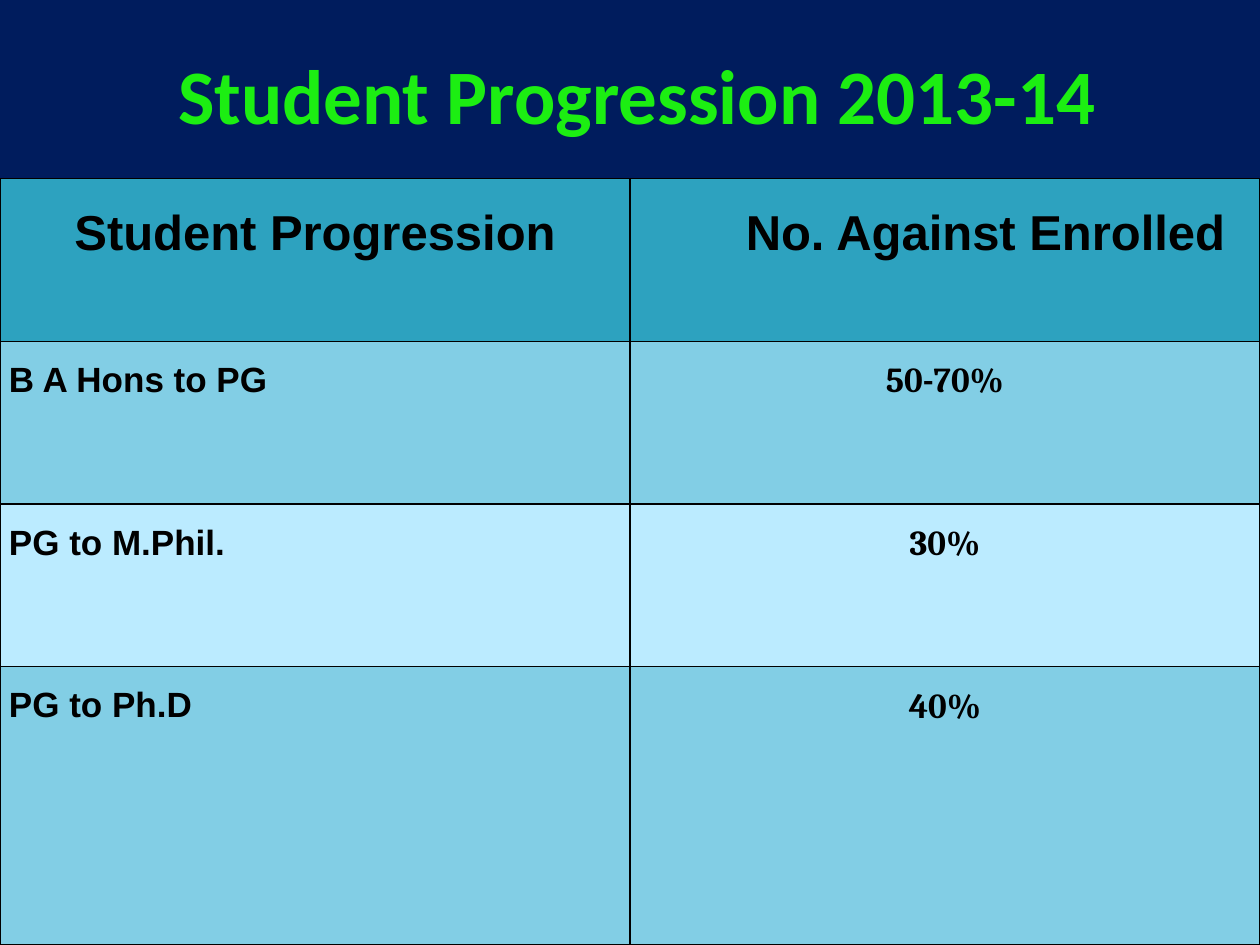
from dataclasses import dataclass

from lxml import etree
from pptx import Presentation
from pptx.dml.color import RGBColor
from pptx.enum import text
from pptx.oxml.ns import qn
from pptx.util import Cm, Pt

COLOURS = {
    "background": "001C5D",
    "title": "1CEE12",
    "ink": "000000",
    "header": "2DA2BF",
    "dark_band": "82CEE5",
    "light_band": "BBEBFF",
}
LEFT, CENTRE = text.PP_ALIGN.LEFT, text.PP_ALIGN.CENTER


@dataclass
class Entry:
    wording: str
    font: str = "Arial"
    size: int = 20
    align: text.PP_ALIGN = LEFT
    indent: float = 0


@dataclass
class Row:
    stage: Entry
    share: Entry
    fill: str
    height: float = 3.28


def percentage(wording: str) -> Entry:
    return Entry(wording, font="Cambria", align=CENTRE)


ROWS = [
    Row(Entry("Student Progression", size=28, align=CENTRE),
        Entry("No. Against Enrolled", size=28, align=CENTRE, indent=1.63),
        "header"),
    Row(Entry("B A Hons to PG"), percentage("50-70%"), "dark_band"),
    Row(Entry("PG to M.Phil."), percentage("30%"), "light_band"),
    Row(Entry("PG to Ph.D"), percentage("40%"), "dark_band", height=5.61),
]


def colour(name: str) -> RGBColor:
    return RGBColor.from_string(COLOURS[name])


def style_runs(paragraph, font: str, size: int, ink: str) -> None:
    for run in paragraph.runs:
        run.font.name = font
        run.font.size = Pt(size)
        run.font.bold = True
        run.font.color.rgb = colour(ink)


def add_borders(cell) -> None:
    properties = cell._tc.get_or_add_tcPr()
    for position, side in enumerate(("a:lnL", "a:lnR", "a:lnT", "a:lnB")):
        border = etree.Element(qn(side), w=str(Pt(1)))
        solid = etree.SubElement(border, qn("a:solidFill"))
        etree.SubElement(solid, qn("a:srgbClr"), val=COLOURS["ink"])
        properties.insert(position, border)


def fill_cell(cell, entry: Entry, fill: str) -> None:
    cell.margin_left = cell.margin_right = Cm(0.18)
    cell.margin_top = cell.margin_bottom = 0
    cell.fill.solid()
    cell.fill.fore_color.rgb = colour(fill)
    add_borders(cell)
    cell.text_frame.text = entry.wording
    paragraph = cell.text_frame.paragraphs[0]
    paragraph.alignment = entry.align
    paragraph.line_spacing = 1.5
    if entry.indent:
        paragraph._p.get_or_add_pPr().set("marL", str(Cm(entry.indent)))
    style_runs(paragraph, entry.font, entry.size, "ink")


def add_title(slide) -> None:
    title = slide.shapes.title
    title.left, title.top = Cm(1.42), Cm(0.94)
    title.width, title.height = Cm(22.86), Cm(1.9)
    frame = title.text_frame
    frame.text = "Student Progression 2013-14"
    frame.auto_size = text.MSO_AUTO_SIZE.NONE
    frame.vertical_anchor = text.MSO_ANCHOR.MIDDLE
    frame.paragraphs[0].alignment = CENTRE
    style_runs(frame.paragraphs[0], "Calibri", 44, "title")


def add_progression(slide) -> None:
    height = sum(row.height for row in ROWS)
    progression = slide.shapes.add_table(
        len(ROWS), 2, 0, Cm(3.6), Cm(25.4), Cm(height)).table
    for index, row in enumerate(ROWS):
        progression.rows[index].height = Cm(row.height)
        for column, entry in enumerate((row.stage, row.share)):
            fill_cell(progression.cell(index, column), entry, row.fill)


def main() -> None:
    deck = Presentation()
    deck.slide_width, deck.slide_height = Cm(25.4), Cm(19.05)
    slide = deck.slides.add_slide(deck.slide_layouts.get_by_name("Title Only"))
    slide.background.fill.solid()
    slide.background.fill.fore_color.rgb = colour("background")
    add_title(slide)
    add_progression(slide)
    deck.save("out.pptx")


if __name__ == "__main__":
    main()
